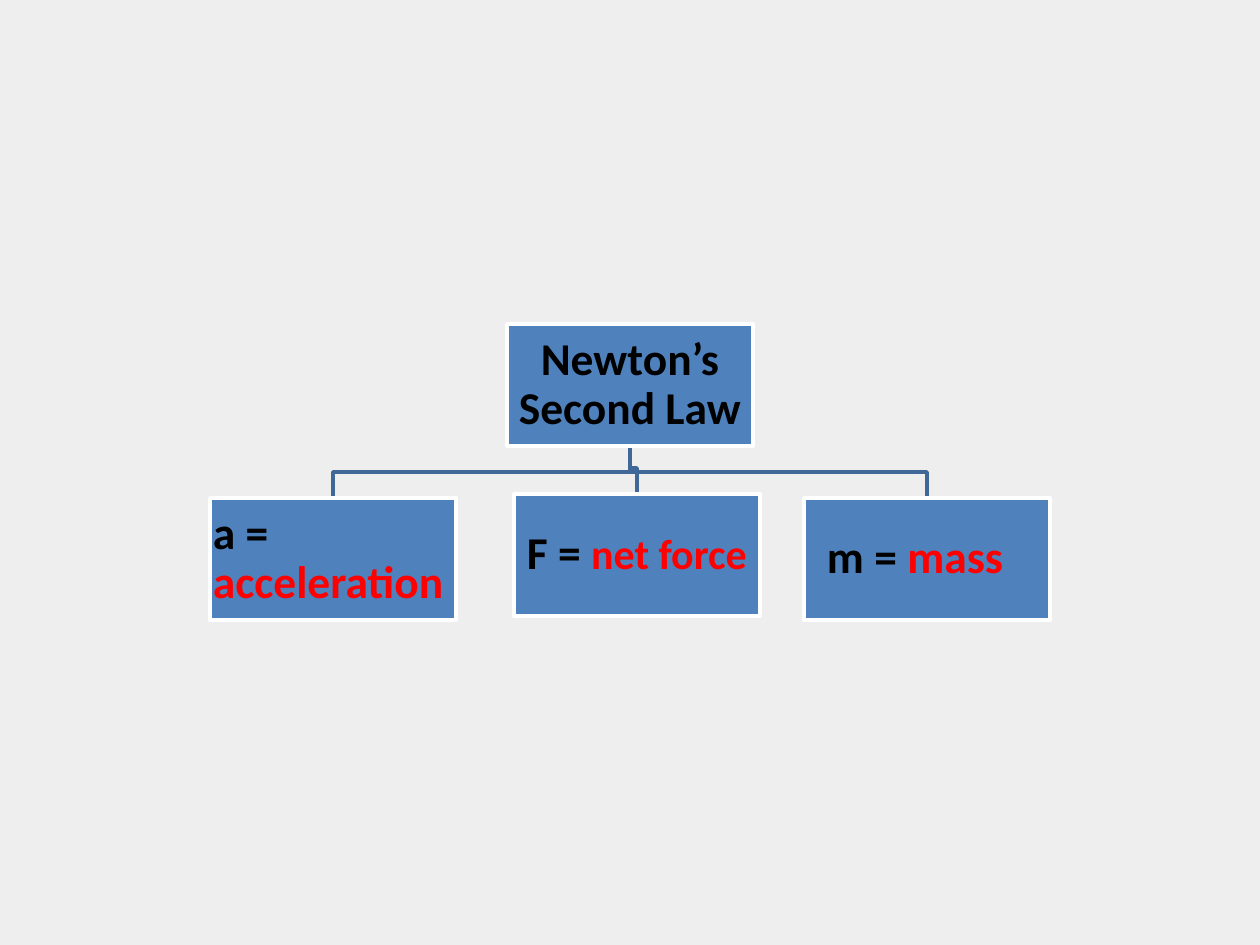
"""Build a slide with a tree of Newton's Second Law and its three quantities."""
from pptx import Presentation
from pptx.dml.color import RGBColor
from pptx.enum.shapes import MSO_SHAPE
from pptx.enum.text import MSO_ANCHOR, PP_ALIGN
from pptx.util import Pt

PX = 914400 // 126
SLIDE_WIDTH, SLIDE_HEIGHT = 1260, 945
BOX_WIDTH, BOX_HEIGHT = 246, 122
INSET, DROP, LINE_WIDTH = 3, 26, 2
BACKGROUND, BOX_FILL, BOX_LINE, TREE_LINE = "EEEEEE", "4F81BD", "FFFFFF", "3F6797"
BLACK, RED = "000000", "FF0000"

ROOT = {"at": (507, 324), "indent": 0, "align": PP_ALIGN.CENTER,
        "runs": [("Newton’s Second Law", 26, BLACK)]}
QUANTITIES = [
    {"at": (210, 498), "indent": 0, "align": PP_ALIGN.LEFT,
     "runs": [("a = ", 26, BLACK), ("acceleration", 26, RED)]},
    {"at": (514, 494), "indent": 10, "align": PP_ALIGN.LEFT,
     "runs": [("F = ", 26, BLACK), ("net force", 24, RED)]},
    {"at": (804, 498), "indent": 20, "align": PP_ALIGN.LEFT,
     "runs": [("m = ", 26, BLACK), ("mass", 26, RED)]},
]


def color(hex_string):
    return RGBColor.from_string(hex_string)


def set_line(shape, hex_string):
    shape.shadow.inherit = False
    shape.line.color.rgb = color(hex_string)
    shape.line.width = Pt(LINE_WIDTH)


def add_branch(slide, child):
    start_x = ROOT["at"][0] + BOX_WIDTH // 2
    start_y = ROOT["at"][1] + BOX_HEIGHT
    end_x, end_y = child["at"][0] + BOX_WIDTH // 2, child["at"][1]
    turn_y = end_y - DROP
    builder = slide.shapes.build_freeform(start_x, start_y, scale=PX)
    builder.add_line_segments(
        [(start_x, turn_y), (end_x, turn_y), (end_x, end_y)], close=False)
    branch = builder.convert_to_shape()
    branch.fill.background()
    set_line(branch, TREE_LINE)


def add_box(slide, node):
    left, top = node["at"]
    box = slide.shapes.add_shape(
        MSO_SHAPE.RECTANGLE, left * PX, top * PX, BOX_WIDTH * PX, BOX_HEIGHT * PX)
    box.fill.solid()
    box.fill.fore_color.rgb = color(BOX_FILL)
    set_line(box, BOX_LINE)
    frame = box.text_frame
    frame.word_wrap = True
    frame.vertical_anchor = MSO_ANCHOR.MIDDLE
    frame.margin_top = frame.margin_right = frame.margin_bottom = INSET * PX
    frame.margin_left = (INSET + node["indent"]) * PX
    paragraph = frame.paragraphs[0]
    paragraph.alignment = node["align"]
    paragraph.line_spacing = 0.9
    for text, size, hex_string in node["runs"]:
        run = paragraph.add_run()
        run.text = text
        run.font.name = "Calibri"
        run.font.size = Pt(size)
        run.font.bold = True
        run.font.color.rgb = color(hex_string)


def main():
    presentation = Presentation()
    presentation.slide_width = SLIDE_WIDTH * PX
    presentation.slide_height = SLIDE_HEIGHT * PX
    slide = presentation.slides.add_slide(presentation.slide_layouts[6])
    slide.background.fill.solid()
    slide.background.fill.fore_color.rgb = color(BACKGROUND)
    for quantity in reversed(QUANTITIES):
        add_branch(slide, quantity)
    for node in [ROOT, *QUANTITIES]:
        add_box(slide, node)
    presentation.save("out.pptx")


if __name__ == "__main__":
    main()
